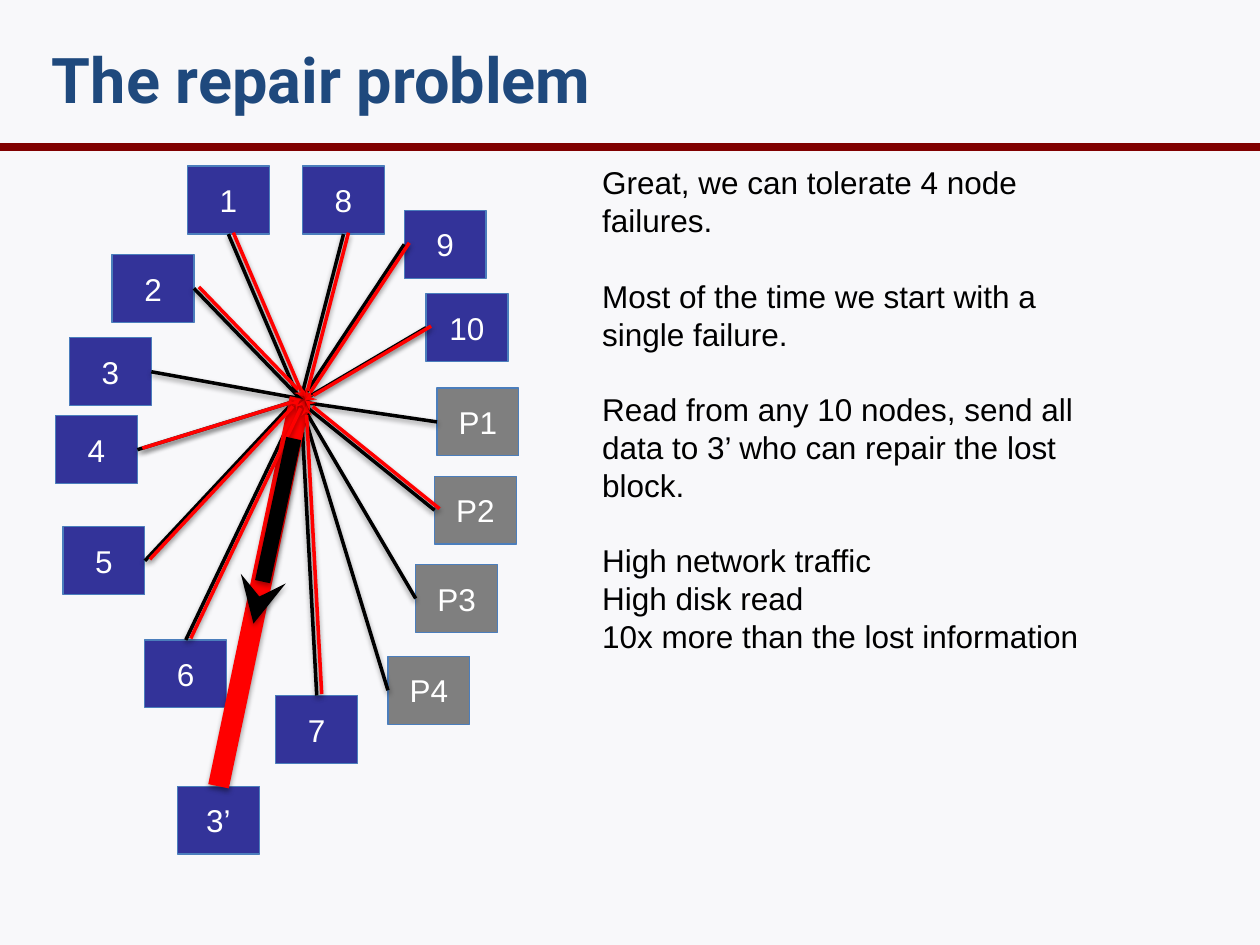
from lxml import etree
from pptx import Presentation
from pptx import util as u
from pptx.dml.color import RGBColor
from pptx.enum import shapes, text
from pptx.oxml.ns import qn

COLORS = {
    "background": "F8F8FA",
    "rule": "800000",
    "title": "1F497D",
    "data": "333399",
    "parity": "7F7F7F",
    "outline": "4B7EBC",
    "white": "FFFFFF",
    "black": "000000",
    "red": "FF0000",
}

# All lengths are in centimetres.
BOX_WIDTH, BOX_HEIGHT = 1.65, 1.37
HUB = (6.05, 8.1)
RED_OFFSET = (0.1, -0.03)
LINE_PITCH = 21.6  # points

# Name, left, top, side where the link starts, point where it ends
NODES = [
    ("1", 3.78, 3.35, "bottom", HUB),
    ("2", 2.26, 5.13, "right", (6.05, 8.03)),
    ("3", 1.4, 6.81, "right", (6.02, 8.03)),
    ("4", 1.12, 8.38, "right", (5.97, 8.08)),
    ("5", 1.27, 10.62, "right", (5.94, 8.08)),
    ("6", 2.92, 12.9, "top", (6.05, 8.08)),
    ("7", 5.56, 14.02, "top", (6.07, 8.2)),
    ("8", 6.1, 3.35, "bottom", HUB),
    ("9", 8.15, 4.24, "left", HUB),
    ("10", 8.59, 5.92, "left", HUB),
    ("P1", 8.81, 7.82, "left", HUB),
    ("P2", 8.76, 9.6, "left", HUB),
    ("P3", 8.38, 11.38, "left", HUB),
    ("P4", 7.82, 13.23, "left", HUB),
]
UNREAD = {"3", "P1", "P3", "P4"}
SIDES = {"top": (0.5, 0), "bottom": (0.5, 1), "left": (0, 0.5), "right": (1, 0.5)}

# Text, whether a gap comes before it
NOTES = [
    ("Great, we can tolerate 4 node failures.", False),
    ("Most of the time we start with a single failure.", True),
    ("Read from any 10 nodes, send all data to 3’ who can repair the lost block.", True),
    ("High network traffic", True),
    ("High disk read", False),
    ("10x more than the lost information", False),
]


def color(name):
    return RGBColor.from_string(COLORS[name])


def write(paragraph, content, size=18, font="Arial", fill="black", bold=False,
          align=text.PP_ALIGN.LEFT):
    paragraph.text = content
    paragraph.alignment = align
    paragraph.font.size = u.Pt(size)
    paragraph.font.name = font
    paragraph.font.bold = bold
    paragraph.font.color.rgb = color(fill)


def add_title(slide, content):
    title = slide.shapes.title
    title.left, title.top = u.Cm(0.79), u.Cm(0)
    title.width, title.height = u.Cm(22.86), u.Cm(3.17)
    frame = title.text_frame
    frame.auto_size = text.MSO_AUTO_SIZE.NONE
    frame.vertical_anchor = text.MSO_ANCHOR.MIDDLE
    write(frame.paragraphs[0], content, size=36, font="Roboto", fill="title", bold=True)


def add_node(slide, name, left, top, fill):
    node = slide.shapes.add_shape(shapes.MSO_SHAPE.RECTANGLE, u.Cm(left), u.Cm(top),
                                  u.Cm(BOX_WIDTH), u.Cm(BOX_HEIGHT))
    node.shadow.inherit = False
    node.fill.solid()
    node.fill.fore_color.rgb = color(fill)
    node.line.color.rgb = color("outline")
    node.line.width = u.Pt(0.75)
    frame = node.text_frame
    frame.vertical_anchor = text.MSO_ANCHOR.MIDDLE
    write(frame.paragraphs[0], name, fill="white", align=text.PP_ALIGN.CENTER)


def add_line(slide, start, end, stroke, width, arrow=None, shadow=True):
    """Draw a line; arrow is "headEnd" (at start) or "tailEnd" (at end)."""
    line = slide.shapes.add_connector(shapes.MSO_CONNECTOR.STRAIGHT,
                                      *(u.Cm(value) for value in (*start, *end)))
    line.line.color.rgb = color(stroke)
    line.line.width = u.Pt(width)
    properties = line._element.spPr
    if arrow:
        etree.SubElement(properties.find(qn("a:ln")), qn(f"a:{arrow}"), type="stealth")
    effects = etree.SubElement(properties, qn("a:effectLst"))
    if shadow:
        outer = etree.SubElement(effects, qn("a:outerShdw"), blurRad="40000",
                                 dist="20000", dir="5400000", rotWithShape="0")
        shade = etree.SubElement(outer, qn("a:srgbClr"), val=COLORS["black"])
        etree.SubElement(shade, qn("a:alpha"), val="38000")


def link_start(left, top, side):
    across, down = SIDES[side]
    return left + across * BOX_WIDTH, top + down * BOX_HEIGHT


def shifted(point):
    return tuple(value + offset for value, offset in zip(point, RED_OFFSET))


def add_diagram(slide):
    for name, left, top, _, _ in NODES:
        add_node(slide, name, left, top, "parity" if name.startswith("P") else "data")
    links = [(name, link_start(left, top, side), end)
             for name, left, top, side, end in NODES]
    for _, start, end in links:
        add_line(slide, start, end, "black", 2)

    left, top = 3.58, 15.85
    add_node(slide, "3’", left, top, "data")
    add_line(slide, link_start(left, top, "top"), (6.05, 8.03), "red", 12)
    for name, start, end in links:
        if name not in UNREAD:
            add_line(slide, shifted(start), shifted(end), "red", 2, arrow="tailEnd")
    add_line(slide, (5.11, 12.57), (5.92, 8.84), "black", 8.75, arrow="headEnd")


def add_notes(slide):
    box = slide.shapes.add_textbox(u.Cm(11.89), u.Cm(3.17), u.Cm(11.05), u.Cm(11.02))
    frame = box.text_frame
    frame.word_wrap = True
    for index, (content, gap) in enumerate(NOTES):
        paragraph = frame.add_paragraph() if index else frame.paragraphs[0]
        write(paragraph, content)
        paragraph.line_spacing = u.Pt(LINE_PITCH)
        if gap:
            paragraph.space_before = u.Pt(LINE_PITCH)


def main():
    presentation = Presentation()
    presentation.slide_width, presentation.slide_height = u.Cm(25.4), u.Cm(19.05)
    slide = presentation.slides.add_slide(presentation.slide_layouts[5])
    slide.background.fill.solid()
    slide.background.fill.fore_color.rgb = color("background")
    add_line(slide, (0, 2.97), (25.4, 2.97), "rule", 4.5, shadow=False)
    add_title(slide, "The repair problem")
    add_diagram(slide)
    add_notes(slide)
    presentation.save("out.pptx")


if __name__ == "__main__":
    main()
